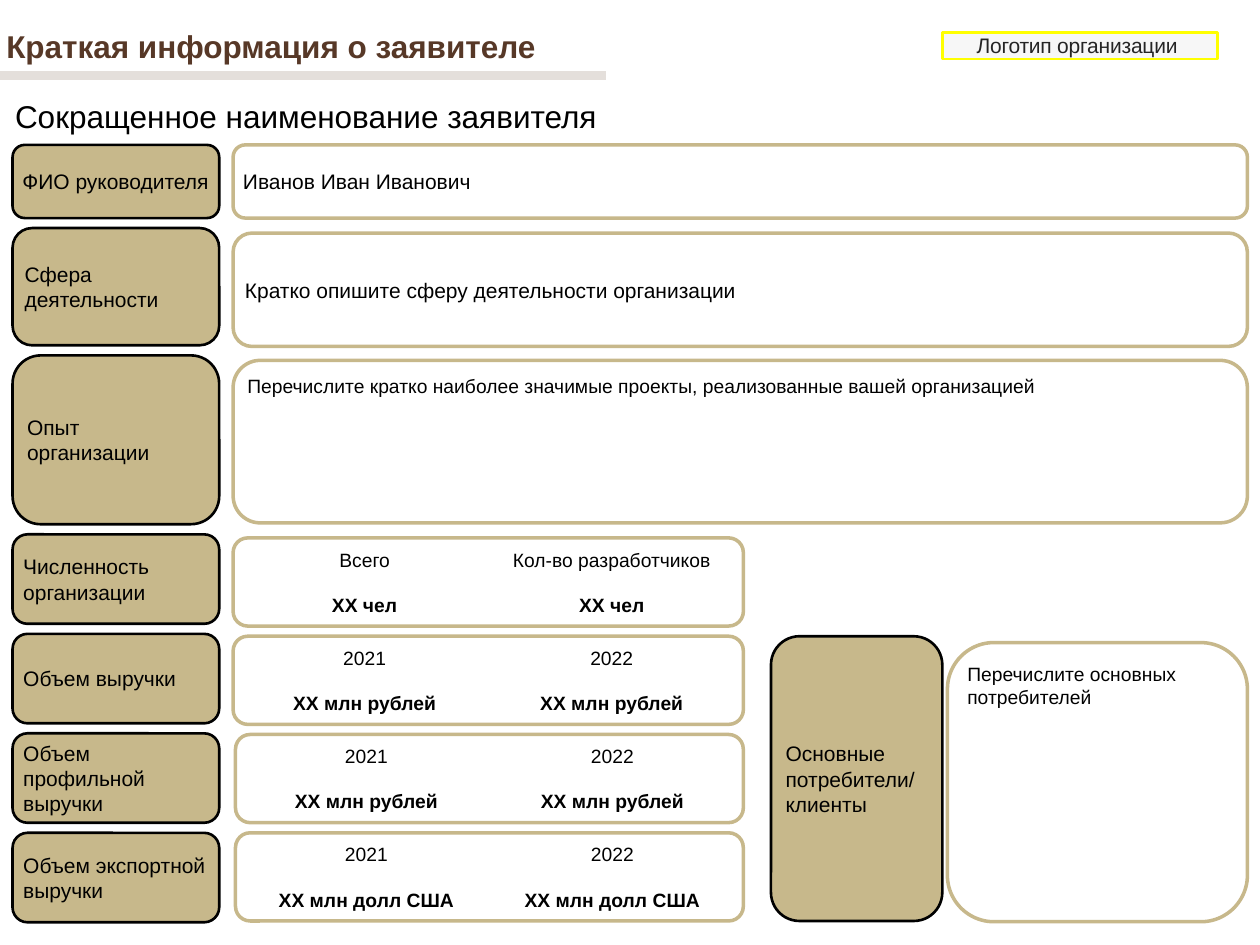
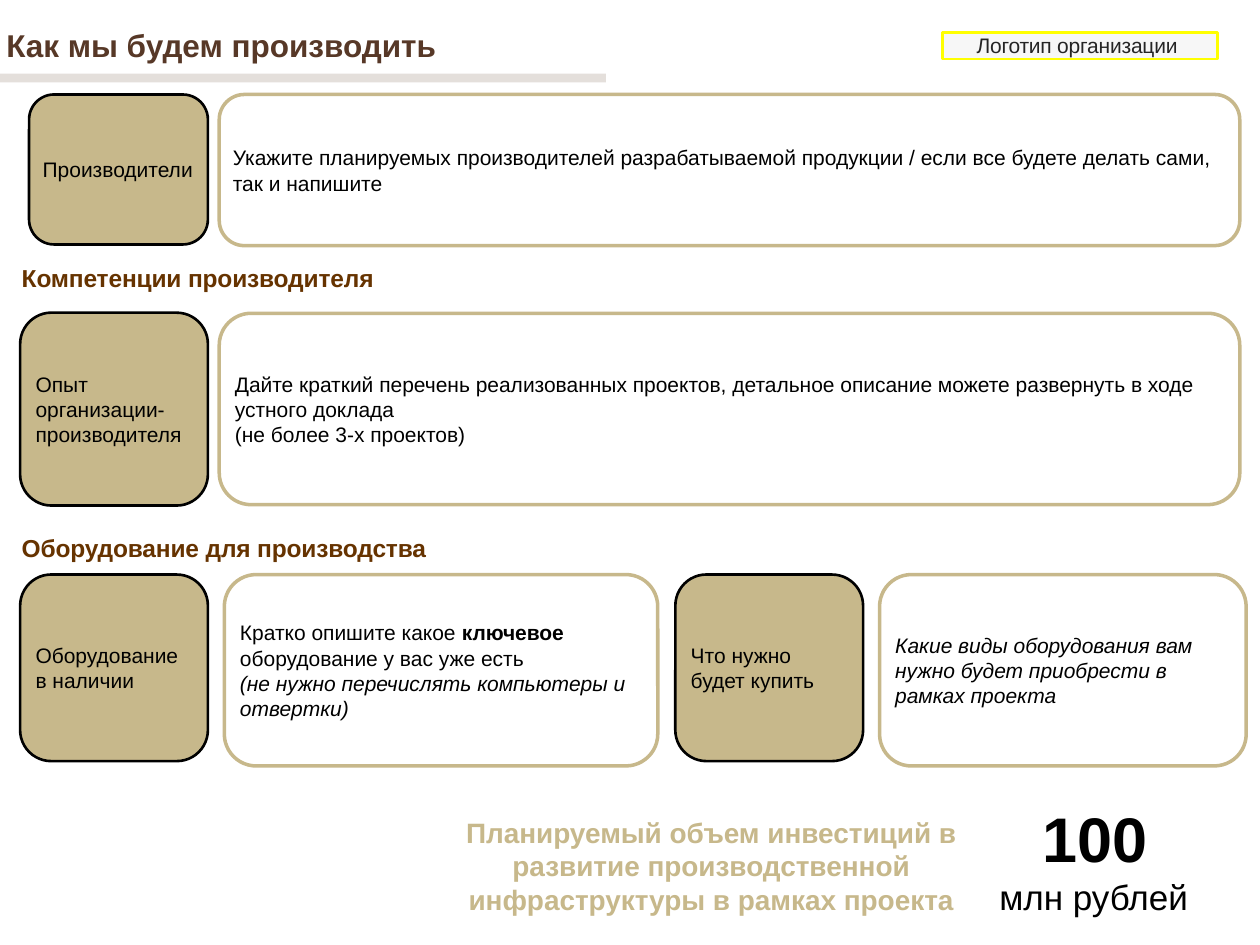
import lxml.etree
import pptx
import pptx.dml.color
import pptx.enum.shapes
import pptx.enum.text
import pptx.oxml.ns
import pptx.util

Pt = pptx.util.Pt
RGBColor = pptx.dml.color.RGBColor
Shape = pptx.enum.shapes.MSO_SHAPE
Anchor = pptx.enum.text.MSO_ANCHOR
Align = pptx.enum.text.PP_ALIGN
AutoSize = pptx.enum.text.MSO_AUTO_SIZE
qn = pptx.oxml.ns.qn

FONT = "Arial"
BLACK = RGBColor(0x00, 0x00, 0x00)
WHITE = RGBColor(0xFF, 0xFF, 0xFF)
SAND = RGBColor(0xC7, 0xB8, 0x8B)
TITLE_BROWN = RGBColor(0x57, 0x38, 0x27)
HEADING_BROWN = RGBColor(0x66, 0x33, 0x00)
BAND = RGBColor(0xA8, 0x99, 0x8C)
LOGO_FILL = RGBColor(0xF1, 0xF1, 0xF1)
LOGO_LINE = RGBColor(0xFF, 0xFF, 0x00)
LOGO_TEXT = RGBColor(0x25, 0x25, 0x25)

# ---- Content: a text is a string or a list of paragraphs;
# ---- a paragraph is a string or a list of (text, style), style "b" or "i".
LOGO_LABEL = "Логотип организации"

APPLICANT_TITLE = "Краткая информация о заявителе"
APPLICANT_NAME = "Сокращенное наименование заявителя"
# label, label height, value top, value height, value
APPLICANT_ROWS = [
    ("ФИО руководителя", 41.8, 82.8, 41.8, "Иванов Иван Иванович"),
    ("Сфера деятельности", 67, 133.2, 64.8,
     "Кратко опишите сферу деятельности организации"),
    ("Опыт организации", 96.5, 205.9, 92.9,
     "Перечислите кратко наиболее значимые проекты, реализованные вашей организацией"),
]
# label, value left, pairs of caption and figure
FIGURE_ROWS = [
    ("Численность организации", 133.2,
     [("Всего", "ХХ чел"), ("Кол-во разработчиков", "ХХ чел")]),
    ("Объем выручки", 133.2,
     [("2021", "ХХ млн рублей"), ("2022", "ХХ млн рублей")]),
    ("Объем профильной выручки", 134.6,
     [("2021", "ХХ млн рублей"), ("2022", "ХХ млн рублей")]),
    ("Объем экспортной выручки", 134.6,
     [("2021", "ХХ млн долл США"), ("2022", "ХХ млн долл США")]),
]
CLIENTS_LABEL = ["Основные потребители/", "клиенты"]
CLIENTS_VALUE = "Перечислите основных потребителей"

PRODUCTION_TITLE = "Как мы будем производить"
SECTION_HEADINGS = [("Компетенции производителя", 150.5),
                    ("Оборудование для производства", 304.6)]
# label box, label, value box, value
PRODUCTION_PAIRS = [
    ((16.6, 54, 102.2, 85.7), "Производители", (125.3, 54, 583.2, 86.4),
     "Укажите планируемых производителей разрабатываемой продукции / "
     "если все будете делать сами, так и напишите"),
    ((11.5, 178.7, 107.3, 110.2), "Опыт организации-производителя",
     (125.3, 179, 583.2, 109.4),
     ["Дайте краткий перечень реализованных проектов, детальное описание "
      "можете развернуть в ходе устного доклада",
      "(не более 3-х проектов)"]),
    ((11.5, 328.3, 107.3, 106.6), "Оборудование в наличии",
     (128.2, 328.3, 247.7, 109.4),
     [[("Кратко опишите какое ", ""), ("ключевое ", "b"),
       ("оборудование у вас уже есть", "")],
      [("(не нужно перечислять компьютеры и отвертки)", "i")]]),
    ((385.9, 328.3, 107.3, 106.6), "Что нужно будет купить",
     (502.6, 328.3, 209.5, 109.4),
     [[("Какие виды оборудования вам нужно будет приобрести в рамках проекта", "i")]]),
]
INVESTMENT_CAPTION = ("Планируемый объем инвестиций в развитие производственной "
                      "инфраструктуры в рамках проекта")
INVESTMENT_AMOUNT = "100"
INVESTMENT_UNIT = "млн рублей"

# ---- Shared geometry
LABEL_LEFT, LABEL_WIDTH = 7.2, 118.1
VALUE_LEFT, VALUE_RIGHT = 133.2, 712.8
ROWS_TOP, ROW_GAP = 82.8, 5.75
FIGURE_LABEL_HEIGHT, FIGURE_HEIGHT = 51.1, 50.4
FIGURE_TOP, FIGURE_STEP, FIGURE_RIGHT = 307.4, 56.17, 424.8


def add_span(para, text, size, color=BLACK, style="", spacing=None):
    span = para.add_run()
    span.text = text
    span.font.name = FONT
    span.font.size = Pt(size)
    span.font.color.rgb = color
    span.font.bold = "b" in style
    span.font.italic = "i" in style
    if spacing:
        span._r.get_or_add_rPr().set("spc", str(spacing))


def set_frame(frame, inset=3.6, anchor=Anchor.TOP, wrap=True, grow=False):
    frame.margin_left = frame.margin_right = Pt(inset)
    frame.margin_top = frame.margin_bottom = Pt(inset)
    frame.vertical_anchor = anchor
    frame.word_wrap = wrap
    frame.auto_size = AutoSize.SHAPE_TO_FIT_TEXT if grow else AutoSize.NONE


def next_para(frame, index, align=Align.LEFT):
    para = frame.add_paragraph() if index else frame.paragraphs[0]
    para.alignment = align
    return para


def write(frame, text, size, color=BLACK, style="", align=Align.LEFT):
    for index, content in enumerate([text] if isinstance(text, str) else text):
        para = next_para(frame, index, align)
        spans = [(content, style)] if isinstance(content, str) else content
        for span_text, span_style in spans:
            add_span(para, span_text, size, color, span_style)


def add_box(page, kind, place, fill, line, line_width):
    box = page.shapes.add_shape(kind, *map(Pt, place))
    box.shadow.inherit = False
    box.fill.solid()
    box.fill.fore_color.rgb = fill
    box.line.color.rgb = line
    box.line.width = Pt(line_width)
    return box


def add_label(page, place, text):
    box = add_box(page, Shape.ROUNDED_RECTANGLE, place, SAND, BLACK, 1.5)
    set_frame(box.text_frame, anchor=Anchor.MIDDLE)
    write(box.text_frame, text, 12)


def add_value(page, place, text, size=12, anchor=Anchor.MIDDLE):
    box = add_box(page, Shape.ROUNDED_RECTANGLE, place, WHITE, SAND, 2)
    set_frame(box.text_frame, anchor=anchor)
    write(box.text_frame, text, size)
    return box


def add_figures(page, place, pairs):
    """Two text columns, each a caption above a bold figure."""
    frame = add_value(page, place, [], 11).text_frame
    columns = frame._txBody.find(qn("a:bodyPr"))
    columns.set("numCol", "2")
    columns.set("spcCol", str(int(Pt(2.88))))
    for index, (caption, figure) in enumerate(pairs):
        add_span(next_para(frame, index, Align.CENTER), caption, 11)
        para = next_para(frame, 1, Align.CENTER)
        para.space_before = Pt(12.6)
        add_span(para, figure, 11, style="b")


def add_text(page, place, text, size, color=BLACK, style="", align=Align.LEFT, wrap=False):
    box = page.shapes.add_textbox(*map(Pt, place))
    set_frame(box.text_frame, wrap=wrap, grow=True)
    write(box.text_frame, text, size, color, style, align)
    return box


def write_tight(frame, text, size, color, style, indent, space_before):
    """One condensed line, indented, in a frame without margins."""
    set_frame(frame, inset=0, grow=True)
    para = next_para(frame, 0)
    para.space_before = Pt(space_before)
    para._p.get_or_add_pPr().set("marL", str(int(Pt(indent))))
    add_span(para, text, size, color, style, spacing=-10)


def add_alpha(properties, part, percent):
    for color in properties.find(qn(part)).iter(qn("a:srgbClr")):
        lxml.etree.SubElement(color, qn("a:alpha")).set("val", str(percent * 1000))


def add_page(deck, title, title_top, title_width, band_y):
    page = deck.slides.add_slide(deck.slide_layouts[6])
    logo = add_box(page, Shape.RECTANGLE, (538.6, 18.7, 157, 15.1),
                   LOGO_FILL, LOGO_LINE, 1.56)
    add_alpha(logo._element.spPr, "a:solidFill", 52)
    write_tight(logo.text_frame, LOGO_LABEL, 12, LOGO_TEXT, "", 19.4, 2)

    add_text(page, (0, title_top, title_width, 28.8), title, 18, TITLE_BROWN, "b")
    band = page.shapes.add_connector(pptx.enum.shapes.MSO_CONNECTOR.STRAIGHT,
                                     0, Pt(band_y), Pt(346.3), Pt(band_y))
    band.line.color.rgb = BAND
    band.line.width = Pt(5)
    add_alpha(band._element.spPr, "a:ln", 31)
    lxml.etree.SubElement(band._element.spPr, qn("a:effectLst"))
    return page


def build_applicant(deck):
    page = add_page(deck, APPLICANT_TITLE, 12.2, 314.6, 43.2)
    add_text(page, (5, 51.8, 349.2, 28.8), APPLICANT_NAME, 18)

    top = ROWS_TOP
    for index, (label, height, value_top, value_height, value) in enumerate(APPLICANT_ROWS):
        add_label(page, (LABEL_LEFT, top, LABEL_WIDTH, height), label)
        is_list = index == len(APPLICANT_ROWS) - 1
        add_value(page, (VALUE_LEFT, value_top, VALUE_RIGHT - VALUE_LEFT, value_height),
                  value, 11 if is_list else 12,
                  Anchor.TOP if is_list else Anchor.MIDDLE)
        top += height + ROW_GAP

    for index, (label, left, pairs) in enumerate(FIGURE_ROWS):
        add_label(page, (LABEL_LEFT, top, LABEL_WIDTH, FIGURE_LABEL_HEIGHT), label)
        add_figures(page, (left, FIGURE_TOP + index * FIGURE_STEP,
                           FIGURE_RIGHT - left, FIGURE_HEIGHT), pairs)
        top += FIGURE_LABEL_HEIGHT + ROW_GAP

    add_label(page, (440.6, 363.6, 97.9, 162.7), CLIENTS_LABEL)
    add_value(page, (541.4, 367.2, 171.4, 159.5), CLIENTS_VALUE, 11, Anchor.TOP)


def build_production(deck):
    page = add_page(deck, PRODUCTION_TITLE, 11.3, 257, 44.6)
    for heading, top in SECTION_HEADINGS:
        box = page.shapes.add_textbox(*map(Pt, (11.5, top, 481.7, 17.3)))
        write_tight(box.text_frame, heading, 14, HEADING_BROWN, "b", 0.9, 1)
    for label_place, label, value_place, value in PRODUCTION_PAIRS:
        add_label(page, label_place, label)
        add_value(page, value_place, value)

    add_text(page, (252, 462.2, 308.9, 65.5), INVESTMENT_CAPTION, 16, SAND, "b",
             Align.CENTER, wrap=True)
    amount = add_text(page, (567.4, 453.6, 116.6, 74.9), INVESTMENT_AMOUNT, 36,
                      style="b", align=Align.CENTER)
    add_span(next_para(amount.text_frame, 1), INVESTMENT_UNIT, 20)


def main():
    deck = pptx.Presentation()
    deck.slide_width, deck.slide_height = Pt(720), Pt(540)
    build_applicant(deck)
    build_production(deck)
    deck.save("out.pptx")


if __name__ == "__main__":
    main()
